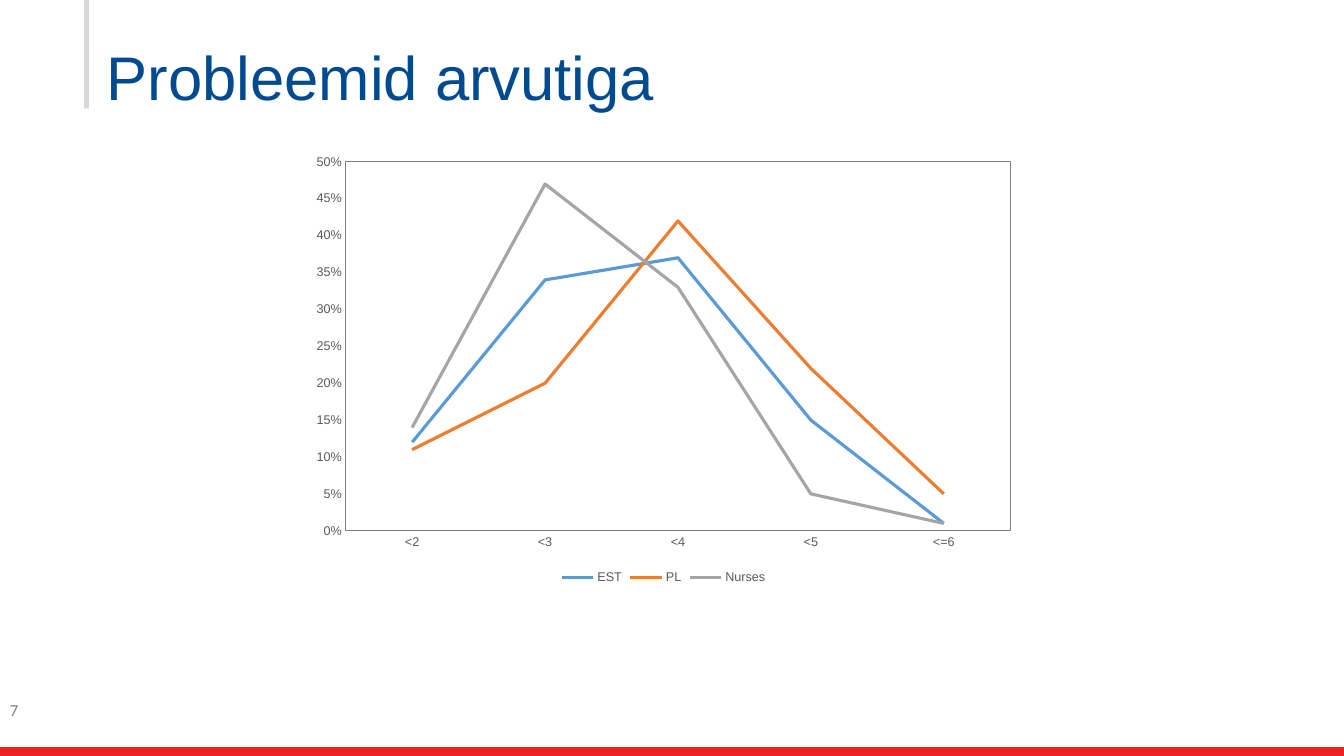
import pptx
import pptx.chart.data
import pptx.dml.color
import pptx.enum.chart
import pptx.enum.shapes
import pptx.enum.text
import pptx.oxml
import pptx.oxml.ns
import pptx.util

Pt = pptx.util.Pt
COLOURS = {"red": "EC2227", "rule": "D6D8D9", "title": "004A8F",
           "frame": "808080", "label": "595959",
           "EST": "5B9BD5", "PL": "ED7D31", "Nurses": "A5A5A5"}
CATEGORIES = ["<2", "<3", "<4", "<5", "<=6"]
SHARES = {"EST": [0.12, 0.34, 0.37, 0.15, 0.01],
          "PL": [0.11, 0.2, 0.42, 0.22, 0.05],
          "Nurses": [0.14, 0.47, 0.33, 0.05, 0.01]}
PLOT_LAYOUT = {"x": 0.06, "y": 0.04, "w": 0.92, "h": 0.83}


def colour(name):
    """Return the named colour."""
    return pptx.dml.color.RGBColor.from_string(COLOURS[name])


def style_font(font, face, size, name):
    """Set face, size and colour of a font."""
    font.name, font.size = face, Pt(size)
    font.color.rgb = colour(name)


def add_bar(page, left, top, width, height, name):
    """Draw a plain filled bar."""
    bar = page.shapes.add_shape(pptx.enum.shapes.MSO_SHAPE.RECTANGLE,
                                Pt(left), Pt(top), Pt(width), Pt(height))
    bar.shadow.inherit = False
    bar.fill.solid()
    bar.fill.fore_color.rgb = colour(name)
    bar.line.fill.background()


def add_frame(page, width, height):
    """Draw the rule beside the title and the band along the foot."""
    add_bar(page, 60, 0, 3.5, 77.5, "rule")
    add_bar(page, 0, height - 6.5, width, 6.5, "red")


def write_text(box, text, face, size, name):
    """Write one left-aligned paragraph from the top of a box."""
    frame = box.text_frame
    frame.word_wrap = True
    frame.auto_size = pptx.enum.text.MSO_AUTO_SIZE.NONE
    frame.vertical_anchor = pptx.enum.text.MSO_ANCHOR.TOP
    frame.text = text
    para = frame.paragraphs[0]
    para.alignment = pptx.enum.text.PP_ALIGN.LEFT
    style_font(para.runs[0].font, face, size, name)
    return para


def add_title(page, left, top, width, height):
    """Place and fill the title placeholder."""
    title = page.shapes.title
    title.left, title.top = Pt(left), Pt(top)
    title.width, title.height = Pt(width), Pt(height)
    para = write_text(title, "Probleemid arvutiga", "Arial", 44, "title")
    para.line_spacing = 0.9


def add_page_number(page, left, top, width, height):
    """Write the page number."""
    box = page.shapes.add_textbox(Pt(left), Pt(top), Pt(width), Pt(height))
    write_text(box, "7", "Calibri", 12, "frame")


def frame_plot(chart):
    """Fix the inner plot area and outline it."""
    plot_area = chart._chartSpace.chart.plotArea
    namespaces = pptx.oxml.ns.nsdecls("c", "a")
    modes = "".join(f'<c:{side}Mode val="edge"/>' for side in "xy")
    sizes = "".join(f'<c:{side} val="{share}"/>'
                    for side, share in PLOT_LAYOUT.items())
    for old in plot_area.findall(pptx.oxml.ns.qn("c:layout")):
        plot_area.remove(old)
    plot_area.insert(0, pptx.oxml.parse_xml(
        f'<c:layout {namespaces}><c:manualLayout>'
        f'<c:layoutTarget val="inner"/>{modes}{sizes}'
        f'</c:manualLayout></c:layout>'))
    plot_area.append(pptx.oxml.parse_xml(
        f'<c:spPr {namespaces}><a:noFill/><a:ln w="{Pt(0.75)}"><a:solidFill>'
        f'<a:srgbClr val="{COLOURS["frame"]}"/></a:solidFill></a:ln></c:spPr>'))


def add_line_chart(page, left, top, width, height):
    """Draw the shares of the three groups as lines."""
    data = pptx.chart.data.CategoryChartData(number_format="0%")
    data.categories = CATEGORIES
    for name, shares in SHARES.items():
        data.add_series(name, shares)
    chart = page.shapes.add_chart(pptx.enum.chart.XL_CHART_TYPE.LINE,
                                  Pt(left), Pt(top), Pt(width), Pt(height),
                                  data).chart
    chart.has_title = False
    style_font(chart.font, "Arial", 9, "label")
    chart.has_legend = True
    chart.legend.position = pptx.enum.chart.XL_LEGEND_POSITION.BOTTOM
    chart.legend.include_in_layout = False
    style_font(chart.legend.font, "Arial", 9, "label")
    for axis in (chart.category_axis, chart.value_axis):
        axis.has_major_gridlines = False
        axis.major_tick_mark = pptx.enum.chart.XL_TICK_MARK.NONE
        style_font(axis.tick_labels.font, "Arial", 9, "label")
    chart.category_axis.format.line.color.rgb = colour("frame")
    chart.category_axis.format.line.width = Pt(0.75)
    values = chart.value_axis
    values.format.line.fill.background()
    values.minimum_scale, values.maximum_scale, values.major_unit = 0, 0.5, 0.05
    values.tick_labels.number_format = "0%"
    values.tick_labels.number_format_is_linked = False
    chart.plots[0].vary_by_categories = False
    for series in chart.plots[0].series:
        series.smooth = False
        series.marker.style = pptx.enum.chart.XL_MARKER_STYLE.NONE
        series.format.line.color.rgb = colour(series.name)
        series.format.line.width = Pt(2.25)
    frame_plot(chart)


def main():
    """Build and save the deck."""
    deck = pptx.Presentation()
    deck.slide_width, deck.slide_height = Pt(960), Pt(540)
    page = deck.slides.add_slide(deck.slide_layouts[5])
    add_frame(page, 960, 540)
    add_title(page, 69, 30, 828, 73)
    add_page_number(page, 0, 496, 216, 29)
    add_line_chart(page, 216, 103, 516, 317.5)
    deck.save("out.pptx")


if __name__ == "__main__":
    main()
